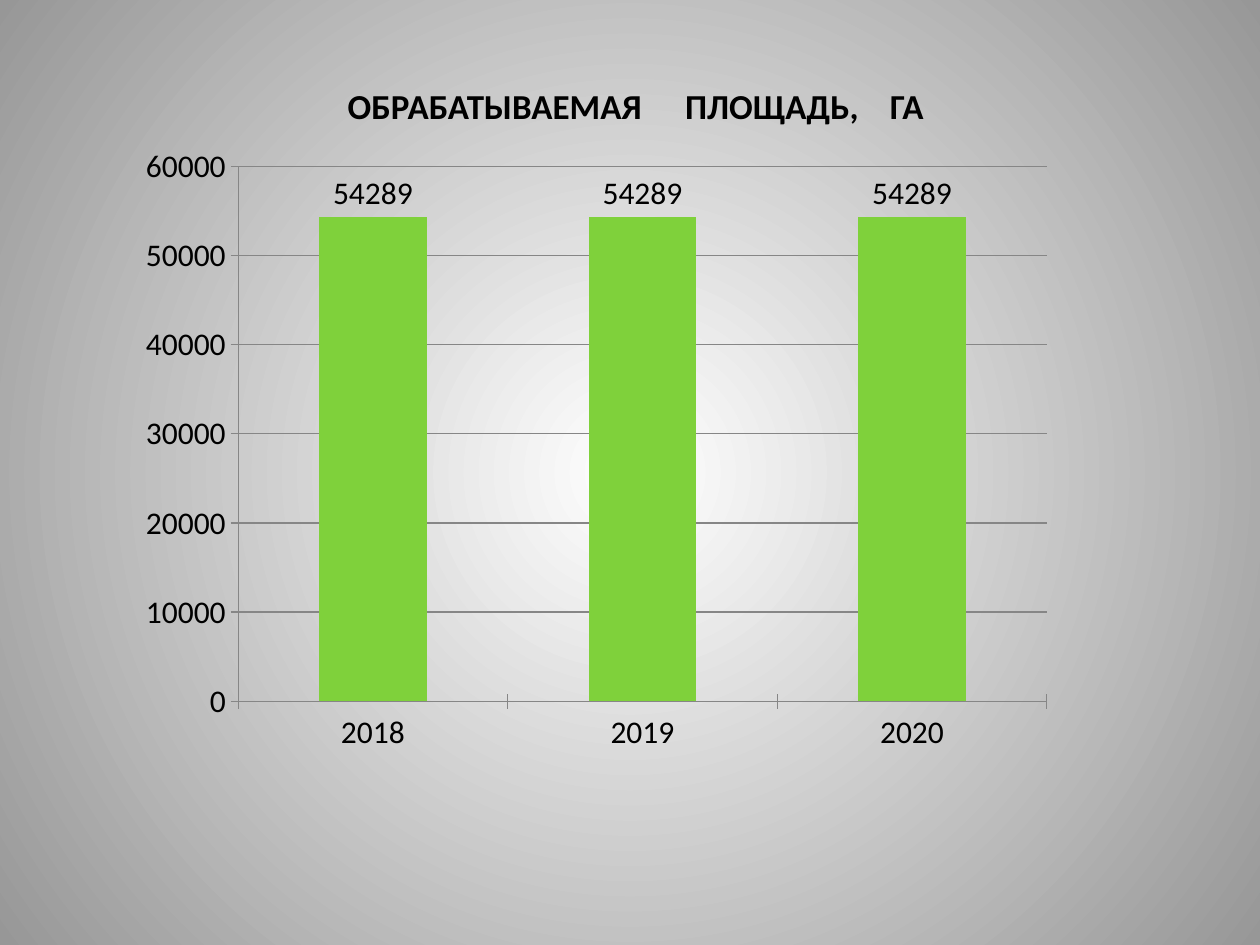
from lxml.etree import SubElement as Sub
from pptx import Presentation
from pptx.chart.data import CategoryChartData as Data
from pptx.dml.color import RGBColor
from pptx.enum.chart import (
    XL_CHART_TYPE as Kind,
    XL_LABEL_POSITION as Spot,
    XL_TICK_MARK as Tick,
)
from pptx.enum.text import (
    MSO_ANCHOR as Anchor,
    MSO_AUTO_SIZE as Auto,
    PP_ALIGN as Align,
)
from pptx.oxml.ns import qn
from pptx.util import Cm, Pt

BLACK = RGBColor(0x00, 0x00, 0x00)
WHITE = RGBColor(0xFF, 0xFF, 0xFF)
GRAY = RGBColor(0x97, 0x97, 0x97)
LINE = RGBColor(0x86, 0x86, 0x86)
GREEN = RGBColor(0x7F, 0xD1, 0x3B)
FONT = "Calibri"
YEARS = ["2018", "2019", "2020"]
AREAS = [54289, 54289, 54289]
TITLE = "ОБРАБАТЫВАЕМАЯ\tПЛОЩАДЬ,\tГА"
TABS = [Cm(6.8), Cm(10.93)]


def apply(item, form):
    for name, value in form.items():
        setattr(item, name, value)


def set_font(font, size, bold=False):
    apply(font, {"name": FONT, "size": Pt(size), "bold": bold})
    font.color.rgb = BLACK


def set_line(line):
    line.color.rgb = LINE
    line.width = Pt(0.75)


def paint_back(slide):
    fill = slide.background.fill
    fill.gradient()
    for stop, color in zip(fill.gradient_stops, (WHITE, GRAY)):
        stop.color.rgb = color
    grad = slide.element.find(".//" + qn("a:gradFill"))
    grad.remove(grad.find(qn("a:lin")))
    ring = Sub(grad, qn("a:path"), {"path": "circle"})
    Sub(ring, qn("a:fillToRect"), dict.fromkeys("ltrb", "50000"))


def add_title(slide):
    title = slide.shapes.title
    apply(title, {"left": Cm(5.94), "top": Cm(1.57),
                  "width": Cm(13.72), "height": Cm(1.12)})
    frame = title.text_frame
    apply(frame, {"word_wrap": True, "auto_size": Auto.SHAPE_TO_FIT_TEXT,
                  "vertical_anchor": Anchor.TOP, "margin_left": Cm(1.07),
                  "margin_right": 0})
    para = frame.paragraphs[0]
    para.alignment = Align.LEFT
    run = para.add_run()
    run.text = TITLE
    set_font(run.font, 20, True)
    stops = Sub(para._p.get_or_add_pPr(), qn("a:tabLst"))
    for pos in TABS:
        Sub(stops, qn("a:tab"), {"pos": str(pos), "algn": "l"})


def place_plot(chart):
    area = chart._chartSpace.find(".//" + qn("c:plotArea"))
    old = area.find(qn("c:layout"))
    if old is not None:
        area.remove(old)
    box = Sub(area, qn("c:layout"))
    area.insert(0, box)
    form = Sub(box, qn("c:manualLayout"))
    parts = {"layoutTarget": "inner", "xMode": "edge", "yMode": "edge",
             "x": 0.158, "y": 0.041, "w": 0.715, "h": 0.754}
    for name, value in parts.items():
        Sub(form, qn("c:" + name), {"val": str(value)})


def add_bars(slide):
    data = Data()
    data.categories = YEARS
    data.add_series("Series 1", AREAS)
    chart = slide.shapes.add_chart(
        Kind.COLUMN_CLUSTERED, Cm(1.2), Cm(2.77), Cm(22.8), Cm(14.3), data
    ).chart
    apply(chart, {"has_legend": False, "has_title": False})
    set_font(chart.font, 18)
    place_plot(chart)
    for axis in (chart.category_axis, chart.value_axis):
        axis.major_tick_mark = Tick.CROSS
        set_line(axis.format.line)
    apply(chart.value_axis, {"minimum_scale": 0, "maximum_scale": 60000,
                             "major_unit": 10000, "has_major_gridlines": True})
    set_line(chart.value_axis.major_gridlines.format.line)
    plot = chart.plots[0]
    apply(plot, {"gap_width": 150, "vary_by_categories": False})
    bars = plot.series[0]
    bars.format.fill.solid()
    bars.format.fill.fore_color.rgb = GREEN
    apply(bars.data_labels, {"show_value": True, "position": Spot.OUTSIDE_END})


def main():
    deck = Presentation()
    apply(deck, {"slide_width": Cm(25.4), "slide_height": Cm(19.05)})
    slide = deck.slides.add_slide(deck.slide_layouts[5])
    paint_back(slide)
    add_title(slide)
    add_bars(slide)
    deck.save("out.pptx")


if __name__ == "__main__":
    main()
